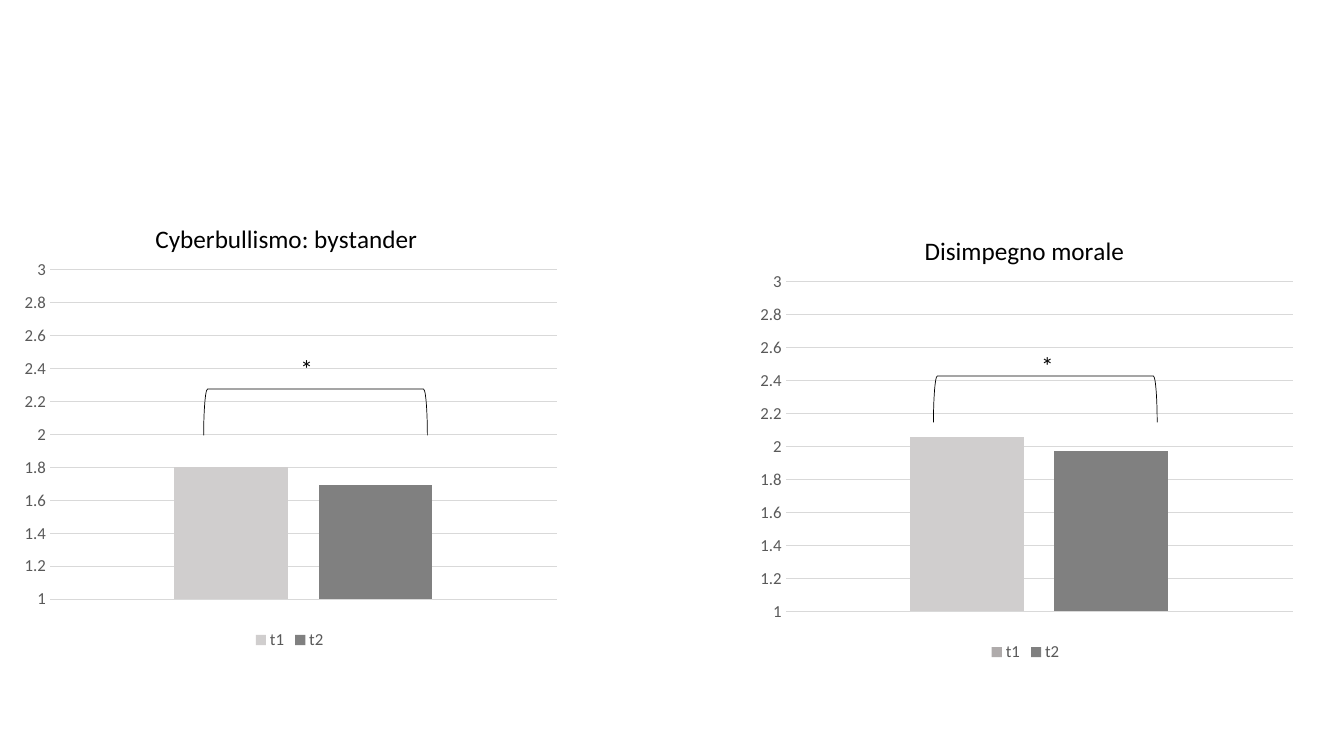
from dataclasses import dataclass

from lxml.etree import SubElement
from pptx import Presentation
from pptx.chart.data import CategoryChartData
from pptx.dml.color import RGBColor
from pptx.enum.chart import XL_CHART_TYPE as ChartType
from pptx.enum.chart import XL_LEGEND_POSITION as LegendPosition
from pptx.enum.chart import XL_TICK_MARK as TickMark
from pptx.enum.shapes import MSO_SHAPE as ShapeType
from pptx.enum.text import MSO_AUTO_SIZE as AutoSize
from pptx.oxml.ns import qn
from pptx.util import Pt


@dataclass(frozen=True)
class Theme:
    font: str = "Calibri"
    black: str = "000000"
    label: str = "595959"
    grid: str = "D9D9D9"
    light: str = "D0CECE"
    medium: str = "AFABAB"
    dark: str = "808080"
    heading_size: float = 18
    label_size: float = 12


def style_font(font, name, size, color):
    font.name = name
    font.size = Pt(size)
    font.bold = False
    font.color.rgb = RGBColor.from_string(color)


def write_text(frame, text, **font_format):
    paragraph = frame.paragraphs[0]
    run = paragraph.add_run()
    run.text = text
    style_font(run.font, **font_format)


def fill_solid(fill, color):
    fill.solid()
    fill.fore_color.rgb = RGBColor.from_string(color)


def place_chart_part(element, index, settings):
    for old_layout in element.findall(qn("c:layout")):
        element.remove(old_layout)
    layout = SubElement(element, qn("c:layout"))
    element.insert(index, layout)
    manual = SubElement(layout, qn("c:manualLayout"))
    for name, value in settings.items():
        SubElement(manual, qn(f"c:{name}")).set("val", str(value))


class SlideBuilder:
    def __init__(self, slide, theme):
        self.slide = slide
        self.theme = theme

    def heading_format(self):
        theme = self.theme
        return dict(name=theme.font, size=theme.heading_size, color=theme.black)

    def label_format(self):
        theme = self.theme
        return dict(name=theme.font, size=theme.label_size, color=theme.label)

    def chart(self, left, top, title, title_x, values, first_color):
        theme = self.theme
        data = CategoryChartData()
        data.categories = ["1"]
        for name, value in zip(("t1", "t2"), values):
            data.add_series(name, [value])
        chart = self.slide.shapes.add_chart(
            ChartType.COLUMN_CLUSTERED, Pt(left), Pt(top), Pt(396.7), Pt(329), data
        ).chart
        style_font(chart.font, **self.label_format())

        chart.has_title = True
        write_text(chart.chart_title.text_frame, title, **self.heading_format())
        place_chart_part(
            chart.chart_title._element, 1,
            dict(xMode="edge", yMode="edge", x=title_x, y=0.05),
        )
        place_chart_part(
            chart._chartSpace.chart.plotArea, 0,
            dict(layoutTarget="inner", xMode="edge", yMode="edge",
                 x=0.068, y=0.165, w=0.913, h=0.716),
        )

        plot = chart.plots[0]
        plot.vary_by_categories = False
        plot.gap_width = 219
        plot.overlap = -27
        for series, color in zip(plot.series, (first_color, theme.dark)):
            fill_solid(series.format.fill, color)
        fill_solid(plot.series[0].points[0].format.fill, theme.light)

        chart.category_axis.visible = False
        axis = chart.value_axis
        axis.minimum_scale, axis.maximum_scale, axis.major_unit = 1, 3, 0.2
        axis.major_tick_mark = axis.minor_tick_mark = TickMark.NONE
        axis.format.line.fill.background()
        style_font(axis.tick_labels.font, **self.label_format())
        grid_line = axis.major_gridlines.format.line
        grid_line.width = Pt(0.75)
        fill_solid(grid_line.fill, theme.grid)

        chart.has_legend = True
        chart.legend.position = LegendPosition.BOTTOM
        chart.legend.include_in_layout = False
        style_font(chart.legend.font, **self.label_format())

    def bracket(self, left, top):
        shape = self.slide.shapes.add_shape(
            ShapeType.LEFT_BRACKET, Pt(left), Pt(top), Pt(33.1), Pt(159.8)
        )
        shape.rotation = 90
        shape.shadow.inherit = False
        shape.fill.background()
        shape.line.width = Pt(0.5)
        fill_solid(shape.line.fill, self.theme.black)

    def significance_mark(self, left, top, width):
        shape = self.slide.shapes.add_textbox(Pt(left), Pt(top), Pt(width), Pt(28.8))
        frame = shape.text_frame
        frame.word_wrap = True
        frame.auto_size = AutoSize.SHAPE_TO_FIT_TEXT
        write_text(frame, "*", **self.heading_format())


def main():
    presentation = Presentation()
    presentation.slide_width = Pt(960)
    presentation.slide_height = Pt(540)
    theme = Theme()
    builder = SlideBuilder(
        presentation.slides.add_slide(presentation.slide_layouts[6]), theme
    )
    builder.chart(534.2, 146.9, "Disimpegno morale", 0.31, (2.06, 1.97), theme.medium)
    builder.chart(8.6, 138.2, "Cyberbullismo: bystander", 0.25, (1.8, 1.69), theme.light)
    builder.bracket(208.8, 214.6)
    builder.bracket(730.1, 205.2)
    builder.significance_mark(736.6, 247, 34.6)
    builder.significance_mark(207.4, 249.1, 31.7)
    presentation.save("out.pptx")


if __name__ == "__main__":
    main()
